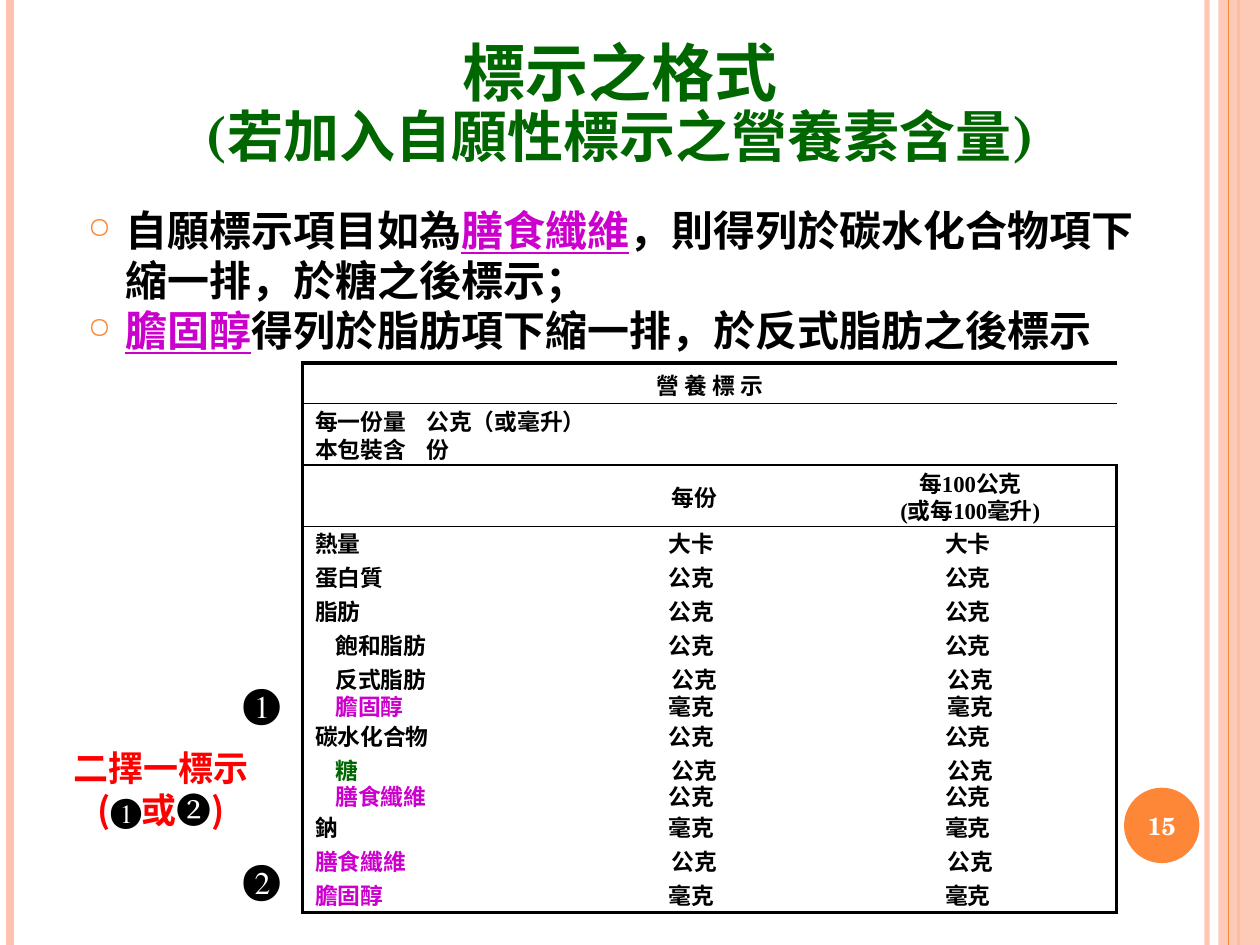
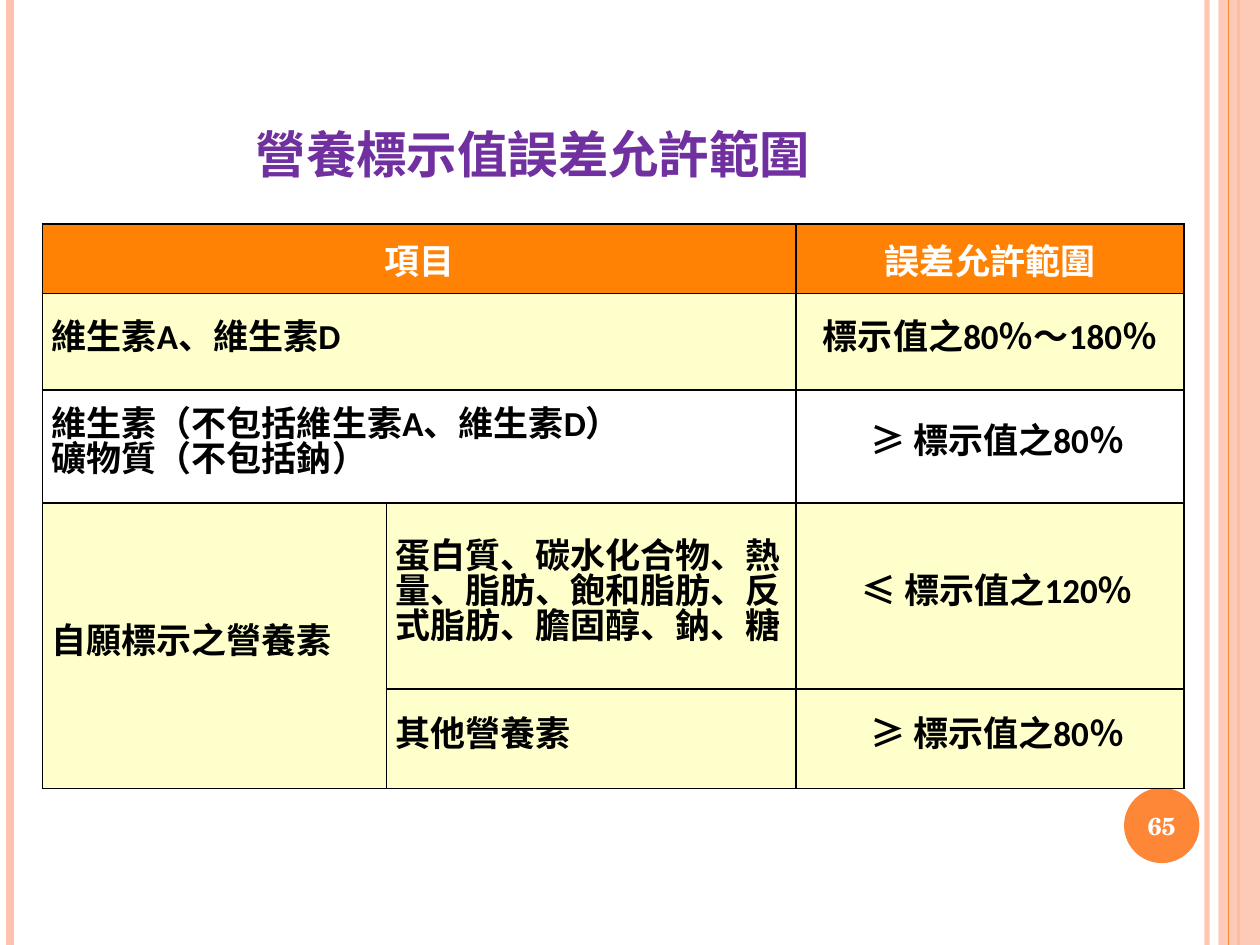
from lxml import etree
from pptx import Presentation
from pptx.dml.color import RGBColor
from pptx.enum import shapes, text
from pptx.oxml import ns
from pptx.util import Cm, Pt

COLORS = {
    "black": "000000", "white": "FFFFFF", "green": "006600", "magenta": "CC00CC",
    "red": "FF0000", "purple": "7030A0", "orange": "FE8637", "peach": "FEC3AE",
    "header": "FF8205", "cream": "FFFFCC",
}
CJK = "Noto Sans CJK SC"
SERIF = "Times New Roman"
SCHOLA = "TeX Gyre Schola"
SANS = "Calibri"
WIDTH, HEIGHT = 25.4, 19.05
CENTER, LEFT, JUSTIFY = text.PP_ALIGN.CENTER, text.PP_ALIGN.LEFT, text.PP_ALIGN.JUSTIFY
MIDDLE, TOP = text.MSO_ANCHOR.MIDDLE, text.MSO_ANCHOR.TOP


def rgb(name):
    return RGBColor.from_string(COLORS[name])


def add_xml(parent, tag, **attributes):
    return etree.SubElement(parent, ns.qn(tag), attributes)


def set_opacity(element, percent):
    for color in element.iter(ns.qn("a:srgbClr")):
        add_xml(color, "a:alpha", val=str(percent * 1000))


def add_run(paragraph, content, size, font, color="black", bold=True,
            underline=False, east_asian=CJK):
    run = paragraph.add_run()
    run.text = content
    run.font.size = Pt(size)
    run.font.bold = bold
    run.font.underline = underline
    run.font.color.rgb = rgb(color)
    run.font.name = font
    add_xml(run._r.get_or_add_rPr(), "a:ea", typeface=east_asian)
    return run


def add_badge(paragraph, badge, size):
    """Append a circled number in regular weight."""
    add_run(paragraph, badge, size, SERIF, bold=False, east_asian=SERIF)


def next_paragraph(frame, align=LEFT, spacing=None):
    """Return the frame's unused first paragraph, or a new one."""
    first = frame.paragraphs[0]
    paragraph = frame.add_paragraph() if first.runs else first
    paragraph.alignment = align
    if spacing:
        paragraph.line_spacing = spacing
    return paragraph


def set_indent(paragraph, left=0, first=0):
    properties = paragraph._p.get_or_add_pPr()
    properties.set("marL", str(Cm(left)))
    properties.set("indent", str(Cm(first)))
    return properties


def add_text_frame(slide, left, top, width, height, wrap=True, anchor=TOP):
    box = slide.shapes.add_textbox(Cm(left), Cm(top), Cm(width), Cm(height))
    box.text_frame.word_wrap = wrap
    box.text_frame.vertical_anchor = anchor
    return box.text_frame


def place_title(slide, left, top, width, height, wrap, anchor):
    title = slide.shapes.title
    title.left, title.top = Cm(left), Cm(top)
    title.width, title.height = Cm(width), Cm(height)
    frame = title.text_frame
    frame.word_wrap = wrap
    frame.auto_size = text.MSO_AUTO_SIZE.NONE
    frame.vertical_anchor = anchor
    return frame


def add_vertical_rule(slide, x, color, width, opacity=100):
    rule = slide.shapes.add_connector(
        shapes.MSO_CONNECTOR.STRAIGHT, Cm(x), 0, Cm(x), Cm(HEIGHT))
    rule.line.color.rgb = rgb(color)
    rule.line.width = Pt(width)
    properties = rule._element.spPr
    add_xml(properties, "a:effectLst")
    if opacity < 100:
        set_opacity(properties, opacity)


def add_filled_shape(slide, kind, left, top, width, height, color):
    shape = slide.shapes.add_shape(kind, Cm(left), Cm(top), Cm(width), Cm(height))
    shape.shadow.inherit = False
    shape.fill.solid()
    shape.fill.fore_color.rgb = rgb(color)
    shape.line.fill.background()
    return shape


def add_slide(presentation, number):
    """Add a title-only slide with the side bands and the page number."""
    slide = presentation.slides.add_slide(presentation.slide_layouts[5])
    add_vertical_rule(slide, 24.33, "peach", 3, 93)
    add_vertical_rule(slide, 0.21, "peach", 4.5)
    add_vertical_rule(slide, 24.97, "orange", 1.5)
    band = add_filled_shape(slide, shapes.MSO_SHAPE.RECTANGLE,
                            24.56, 0, WIDTH - 24.56, HEIGHT, "peach")
    set_opacity(band._element.spPr, 87)
    add_vertical_rule(slide, 24.77, "orange", 0.75)
    add_filled_shape(slide, shapes.MSO_SHAPE.OVAL, 22.66, 15.88, 1.52, 1.52, "orange")
    frame = add_text_frame(slide, 22.57, 15.93, 1.7, 1.45, anchor=MIDDLE)
    add_run(next_paragraph(frame, CENTER), str(number), 14, SCHOLA, "white")
    return slide


def add_table(slide, left, top, columns, rows):
    frame = slide.shapes.add_table(len(rows), len(columns), Cm(left), Cm(top),
                                   Cm(sum(columns)), Cm(sum(rows)))
    table = frame.table
    table.first_row = table.horz_banding = False
    for column, width in zip(table.columns, columns):
        column.width = Cm(width)
    for row, height in zip(table.rows, rows):
        row.height = Cm(height)
    return table


def set_borders(cell, left, right, top, bottom):
    """Draw black borders of the given widths in points; 0 hides a side."""
    properties = cell._tc.get_or_add_tcPr()
    sides = zip(("a:lnL", "a:lnR", "a:lnT", "a:lnB"), (left, right, top, bottom))
    for position, (tag, width) in enumerate(sides):
        line = etree.Element(ns.qn(tag), w=str(Pt(width)))
        if width:
            add_xml(add_xml(line, "a:solidFill"), "a:srgbClr", val=COLORS["black"])
        else:
            add_xml(line, "a:noFill")
        properties.insert(position, line)


def set_cell_margins(cell, side, top):
    cell.margin_left = cell.margin_right = Cm(side)
    cell.margin_top, cell.margin_bottom = Cm(top), 0


def fill_label_cell(cell, lines, align=LEFT, spacing=None):
    """Write lines given as (text, colour, indented)."""
    for content, color, indented in lines:
        paragraph = next_paragraph(cell.text_frame, align, spacing)
        if indented:
            set_indent(paragraph, 0.41)
        if "\t" in content:
            tabs = add_xml(paragraph._p.get_or_add_pPr(), "a:tabLst")
            add_xml(tabs, "a:tab", pos=str(Cm(2.25)), algn="l")
        add_run(paragraph, content, 13, SERIF, color)


def plain(*contents):
    return [(content, "black", False) for content in contents]


def add_nutrition_table(slide):
    gram, milligram, kilocalorie = "公克 ", "毫克 ", "大卡 "
    nutrients = [
        (plain("熱量"), [kilocalorie], [kilocalorie]),
        (plain("蛋白質"), [gram], [gram]),
        (plain("脂肪"), [gram], [gram]),
        ([("飽和脂肪", "black", True)], [gram], [gram]),
        ([("反式脂肪", "black", True), ("膽固醇", "magenta", True)],
         ["公克", milligram], ["公克", "毫克"]),
        (plain("碳水化合物"), [gram], [gram]),
        ([("糖", "green", True), ("膳食纖維", "magenta", True)],
         ["公克", gram], ["公克", gram]),
        (plain("鈉"), [milligram], [milligram]),
        ([("膳食纖維", "magenta", False)], ["公克"], ["公克"]),
        ([("膽固醇", "magenta", False)], [milligram], [milligram]),
    ]
    header_rows = [0.81, 1.24, 1.24]
    rows = header_rows + [1.14 if len(names) > 1 else 0.69 for names, *_ in nutrients]
    table = add_table(slide, 6.1, 7.32, [5.28, 5.23, 5.9], rows)
    last_row, last_column = len(rows) - 1, 2
    for r in range(len(rows)):
        for c in range(last_column + 1):
            cell = table.cell(r, c)
            cell.fill.background()
            set_cell_margins(cell, 0.25, 0.1)
            set_borders(cell,
                        2.25 if c == 0 else 0,
                        2.25 if c == last_column else 0,
                        2.25 if r == 0 else int(r <= len(header_rows)),
                        2.25 if r == last_row else int(r < len(header_rows)))
    for r in (0, 1):
        table.cell(r, 0).merge(table.cell(r, last_column))

    fill_label_cell(table.cell(0, 0), plain("營 養 標 示"), CENTER)
    fill_label_cell(table.cell(1, 0),
                    plain("每一份量\t公克（或毫升）", "本包裝含\t份"), spacing=0.85)
    table.cell(2, 1).vertical_anchor = MIDDLE
    fill_label_cell(table.cell(2, 1), plain("每份"), CENTER, 0.85)
    fill_label_cell(table.cell(2, 2), plain("每100公克", "(或每100毫升)"), CENTER, 0.85)
    for r, (names, *units) in enumerate(nutrients, len(header_rows)):
        fill_label_cell(table.cell(r, 0), names, spacing=0.8)
        for c, unit in enumerate(units, 1):
            fill_label_cell(table.cell(r, c), plain(*unit), CENTER, 0.8)


def add_rules_text(slide):
    frame = add_text_frame(slide, 1.52, 4.01, 22.2, 3.3)
    rules = [
        [("自願標示項目如為", False), ("膳食纖維", True),
         ("，則得列於碳水化合物項下縮一排，於糖之後標示；", False)],
        [("膽固醇", True), ("得列於脂肪項下縮一排，於反式脂肪之後標示", False)],
    ]
    for rule in rules:
        paragraph = next_paragraph(frame, spacing=Pt(28.6))
        properties = set_indent(paragraph, 0.76, -0.76)
        bullet_color = add_xml(properties, "a:buClr")
        add_xml(bullet_color, "a:srgbClr", val=COLORS["orange"])
        add_xml(properties, "a:buSzPct", val="70000")
        add_xml(properties, "a:buChar", char="○")
        for content, key in rule:
            add_run(paragraph, content, 24, CJK, "magenta" if key else "black",
                    underline=key)


def add_choice_note(slide):
    for badge, top in (("❷", 17.07), ("❶", 13.51)):
        frame = add_text_frame(slide, 4.65, top, 1.27, 1.27, wrap=False)
        add_badge(next_paragraph(frame), badge, 24)
    frame = add_text_frame(slide, 1.22, 14.93, 4.06, 1.96, wrap=False)
    add_run(next_paragraph(frame, CENTER, Pt(24)), "二擇一標示", 20, CJK, "red")
    paragraph = next_paragraph(frame, CENTER, Pt(24))
    for part in "(❶或❷)":
        if part in "❶❷":
            add_badge(paragraph, part, 20)
        else:
            add_run(paragraph, part, 20, CJK, "red")


def build_format_slide(presentation):
    slide = add_slide(presentation, 15)
    frame = place_title(slide, 1.5, 0.69, 22, 2.87, True, TOP)
    for content, size, spacing in (("標示之格式", 36, 39),
                                   ("(若加入自願性標示之營養素含量)", 32, 34)):
        add_run(next_paragraph(frame, CENTER, Pt(spacing)), content, size, SCHOLA, "green")
    add_rules_text(slide)
    add_nutrition_table(slide)
    add_choice_note(slide)


def fill_tolerance_cell(cell, lines, align, color="black", spacing=Pt(20)):
    for content in lines:
        paragraph = next_paragraph(cell.text_frame, align, spacing)
        if content[0] in "≥≤":
            set_indent(paragraph, first=0.28)
        add_run(paragraph, content, 20, SANS, color)


def build_tolerance_slide(presentation):
    slide = add_slide(presentation, 65)
    frame = place_title(slide, 4.9, 2.08, 14.91, 1.8, False, MIDDLE)
    title_run = add_run(next_paragraph(frame), "營養標示值誤差允許範圍", 36, SANS, "purple")
    title_run._r.get_or_add_rPr().set("cap", "small")

    row_fills = ["header", "cream", "white", "cream", "cream"]
    table = add_table(slide, 0.86, 4.52, [6.93, 8.26, 7.82], [1.4, 1.94, 2.28, 3.75, 2.01])
    for r, color in enumerate(row_fills):
        for c in range(3):
            cell = table.cell(r, c)
            cell.fill.solid()
            cell.fill.fore_color.rgb = rgb(color)
            cell.vertical_anchor = MIDDLE
            set_cell_margins(cell, 0.18, 0)
            set_borders(cell, 1, 1, 1, 1)
    for r in range(3):
        table.cell(r, 0).merge(table.cell(r, 1))
    table.cell(3, 0).merge(table.cell(4, 0))

    for c, heading in ((0, "項目"), (2, "誤差允許範圍")):
        fill_tolerance_cell(table.cell(0, c), [heading], CENTER, "white", None)
    items = [["維生素A、維生素D"],
             ["維生素（不包括維生素A、維生素D）", "礦物質（不包括鈉）"],
             ["自願標示之營養素"]]
    for r, lines in enumerate(items, 1):
        fill_tolerance_cell(table.cell(r, 0), lines, JUSTIFY)
    groups = ["蛋白質、碳水化合物、熱量、脂肪、飽和脂肪、反式脂肪、膽固醇、鈉、糖", "其他營養素"]
    for r, group in enumerate(groups, 3):
        fill_tolerance_cell(table.cell(r, 1), [group], LEFT)
    ranges = ["標示值之80％～180％", "≥ 標示值之80％", "≤ 標示值之120％", "≥ 標示值之80％"]
    for r, allowed in enumerate(ranges, 1):
        fill_tolerance_cell(table.cell(r, 2), [allowed], CENTER)


def main():
    presentation = Presentation()
    presentation.slide_width, presentation.slide_height = Cm(WIDTH), Cm(HEIGHT)
    build_format_slide(presentation)
    build_tolerance_slide(presentation)
    presentation.save("out.pptx")


if __name__ == "__main__":
    main()
